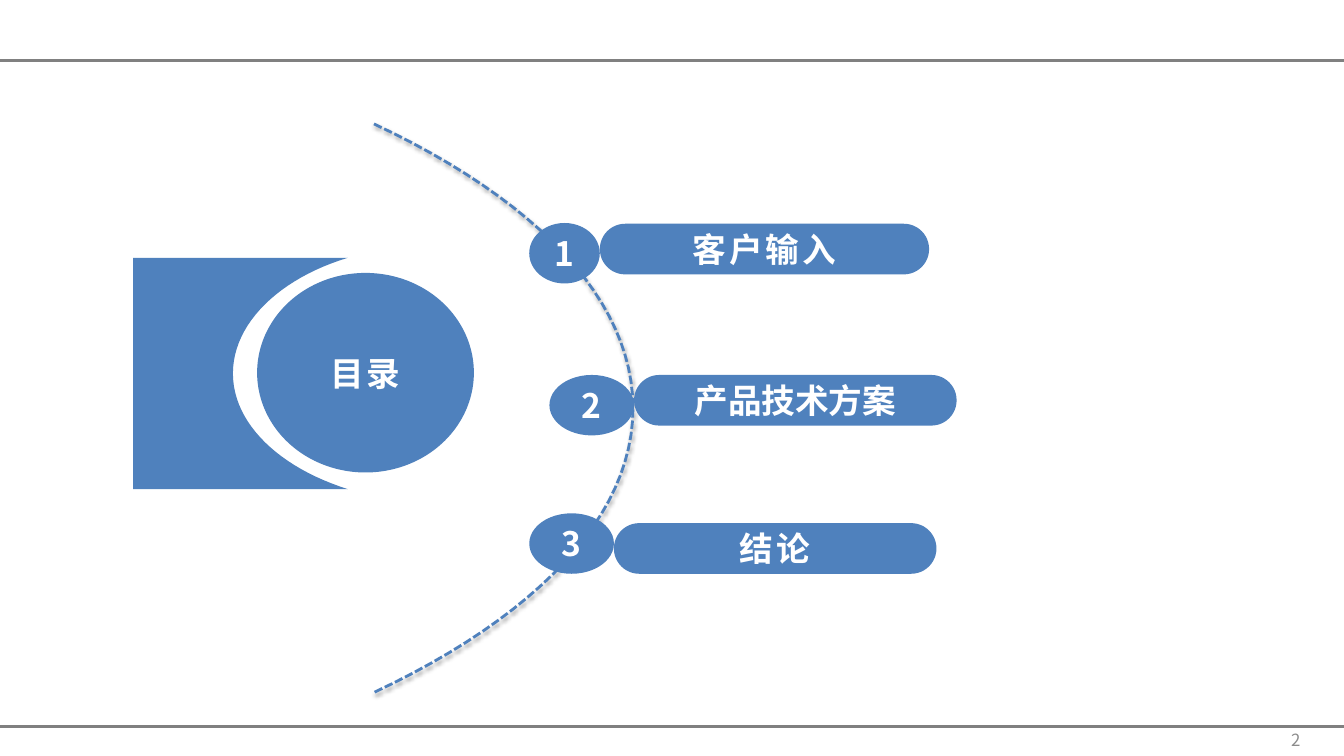
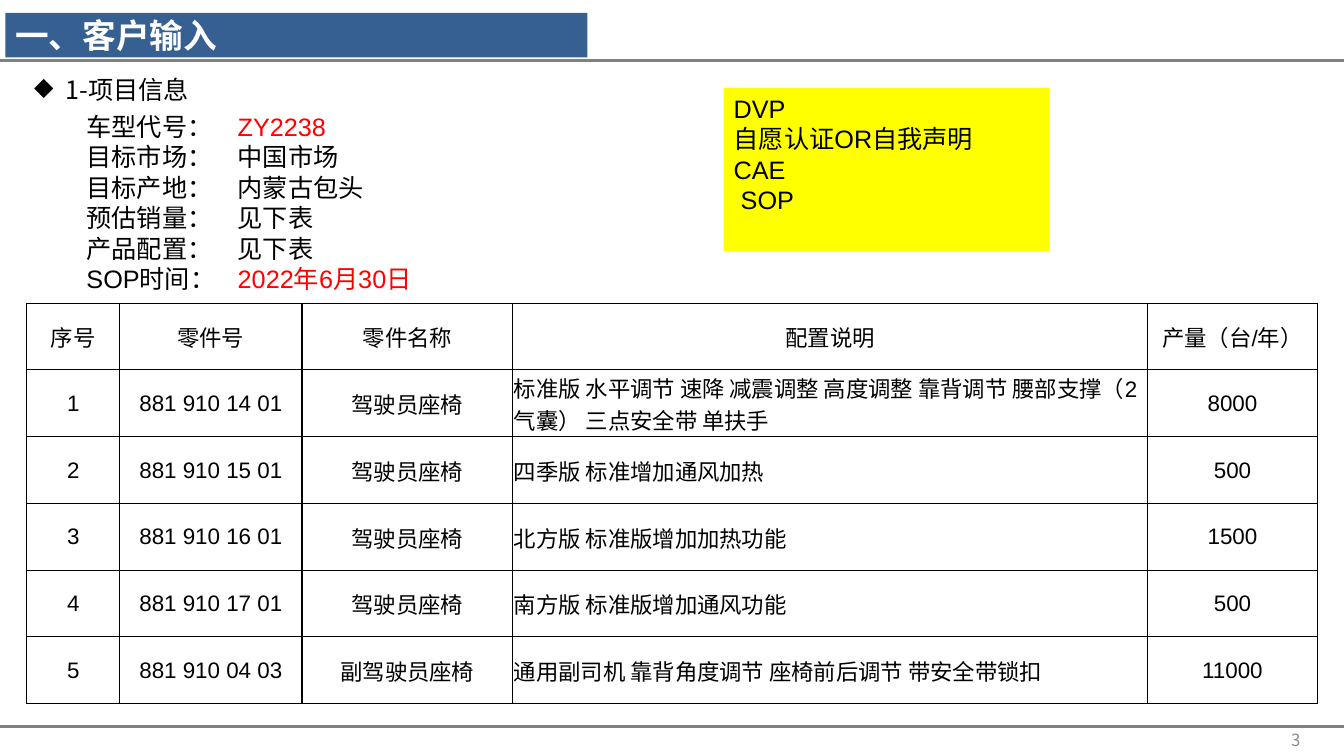
from lxml import etree
from pptx import Presentation
from pptx.dml.color import RGBColor
from pptx.enum.dml import MSO_LINE
from pptx.enum.shapes import MSO_CONNECTOR, MSO_SHAPE as Preset
from pptx.enum.text import MSO_ANCHOR as Anchor, PP_ALIGN as Align
from pptx.oxml.ns import qn
from pptx.util import Emu, Inches, Pt

WIDTH, HEIGHT = Inches(13.33), Inches(7.5)
BLUE = RGBColor(0x4F, 0x81, 0xBD)
DARK_BLUE = RGBColor(0x37, 0x60, 0x92)
YELLOW = RGBColor(0xFF, 0xFF, 0x00)
RED = RGBColor(0xFF, 0x00, 0x00)
WHITE = RGBColor(0xFF, 0xFF, 0xFF)
BLACK = RGBColor(0x00, 0x00, 0x00)
RULE_GREY = RGBColor(0x80, 0x80, 0x80)
NUMBER_GREY = RGBColor(0x8C, 0x8C, 0x8C)
CHINESE_FONT, LATIN_FONT = "Noto Sans CJK SC", "Arial"
BODY_LINE = Pt(21.8)

BADGE_HEIGHT, PILL_HEIGHT = 8, 6.7
AGENDA = [
    ("1", "客户输入", 39.38, 29.5, 5.25, 29.6, 24.5),
    ("2", "产品技术方案", 40.88, 49.6, 6.3, 49.6, 24),
    ("3", "结论", 39.38, 67.9, 6.3, 69.2, 24),
]
PROJECT_FACTS = [
    ("车型代号：", "ZY2238", RED),
    ("目标市场：", "中国市场", BLACK),
    ("目标产地：", "内蒙古包头", BLACK),
    ("预估销量：", "见下表", BLACK),
    ("产品配置：", "见下表", BLACK),
    ("SOP时间：", "2022年6月30日", RED),
]
MILESTONES = ["DVP", "自愿认证OR自我声明", "CAE", "SOP"]
COLUMN_SHARES = [6.9, 13.58, 15.68, 47.25, 12.6]
ROW_SHARE = 8.83
DESCRIPTION_COLUMN = 3
PARTS = [
    ("序号", "零件号", "零件名称", "配置说明", "产量（台/年）"),
    ("1", "881 910 14 01", "驾驶员座椅",
     "标准版 水平调节 速降 减震调整 高度调整 靠背调节 腰部支撑（2气囊） 三点安全带 单扶手", "8000"),
    ("2", "881 910 15 01", "驾驶员座椅", "四季版 标准增加通风加热", "500"),
    ("3", "881 910 16 01", "驾驶员座椅", "北方版 标准版增加加热功能", "1500"),
    ("4", "881 910 17 01", "驾驶员座椅", "南方版 标准版增加通风功能", "500"),
    ("5", "881 910 04 03", "副驾驶员座椅", "通用副司机 靠背角度调节 座椅前后调节 带安全带锁扣", "11000"),
]


def across(share):
    return Emu(round(WIDTH * share / 100))


def down(share):
    return Emu(round(HEIGHT * share / 100))


def place(left, top, width, height):
    return across(left), down(top), across(width), down(height)


def set_font(paragraph, size, color=None, name=CHINESE_FONT, bold=False, spacing=0):
    font = paragraph.font
    font.size, font.name, font.bold = Pt(size), name, bold
    if color is not None:
        font.color.rgb = color
    properties = paragraph._p.pPr.find(qn("a:defRPr"))
    etree.SubElement(properties, qn("a:ea"), typeface=CHINESE_FONT)
    if spacing:
        properties.set("spc", str(round(spacing * 100)))


def add_panel(slide, preset, box, color):
    shape = slide.shapes.add_shape(preset, *place(*box))
    shape.shadow.inherit = False
    shape.fill.solid()
    shape.fill.fore_color.rgb = color
    shape.line.fill.background()
    return shape


def add_label(slide, preset, box, text, color=BLUE, align=Align.CENTER, spacing=0):
    shape = add_panel(slide, preset, box, color)
    frame = shape.text_frame
    frame.word_wrap = False
    frame.vertical_anchor = Anchor.MIDDLE
    frame.margin_top = frame.margin_bottom = 0
    paragraph = frame.paragraphs[0]
    paragraph.text, paragraph.alignment = text, align
    set_font(paragraph, 24, WHITE, bold=True, spacing=spacing)
    return shape


def add_text_frame(slide, box):
    frame = slide.shapes.add_textbox(*place(*box)).text_frame
    frame.word_wrap = True
    return frame


def add_lines(frame, count):
    return [frame.paragraphs[0]] + [frame.add_paragraph() for _ in range(count - 1)]


def add_rule(slide, top):
    line = slide.shapes.add_connector(
        MSO_CONNECTOR.STRAIGHT, 0, down(top), WIDTH, down(top))
    line.line.color.rgb = RULE_GREY
    line.line.width = Pt(2)
    etree.SubElement(line._element.spPr, qn("a:effectLst"))


def add_framed_slide(presentation, number):
    slide = presentation.slides.add_slide(presentation.slide_layouts[6])
    for top in (8, 96.13):
        add_rule(slide, top)
    frame = add_text_frame(slide, (74.2, 95.2, 23.3, 5.3))
    frame.vertical_anchor = Anchor.MIDDLE
    paragraph = frame.paragraphs[0]
    paragraph.text, paragraph.alignment = str(number), Align.RIGHT
    set_font(paragraph, 12, NUMBER_GREY)
    return slide


def curve(start, first, second, end, steps=24):
    points = []
    for step in range(steps + 1):
        t = step / steps
        weights = ((1 - t) ** 3, 3 * t * (1 - t) ** 2, 3 * t * t * (1 - t), t ** 3)
        points.append(tuple(
            sum(weight * value for weight, value in zip(weights, values))
            for values in zip(start, first, second, end)))
    return points


def add_outline(slide, points, close):
    corners = [(across(x), down(y)) for x, y in points]
    builder = slide.shapes.build_freeform(*corners[0], scale=1.0)
    builder.add_line_segments(corners[1:], close=close)
    shape = builder.convert_to_shape()
    shape.shadow.inherit = False
    return shape


def add_notched_block(slide):
    upper = curve((25.88, 34.1), (20.85, 36.8), (17.33, 42.7), (17.33, 49.4))
    lower = curve((17.33, 49.4), (17.33, 56.1), (20.85, 61.9), (25.88, 64.7))
    block = add_outline(slide, [(9.9, 64.7), (9.9, 34.1)] + upper + lower[1:], True)
    block.fill.solid()
    block.fill.fore_color.rgb = BLUE
    block.line.fill.background()


def add_dashed_arc(slide):
    upper = curve((27.83, 16.4), (39.83, 26.4), (47.1, 39.6), (47.1, 54))
    lower = curve((47.1, 54), (47.1, 68.4), (39.83, 81.6), (27.83, 91.6))
    arc = add_outline(slide, upper + lower[1:], False)
    arc.fill.background()
    arc.line.color.rgb = BLUE
    arc.line.width = Pt(2)
    arc.line.dash_style = MSO_LINE.SQUARE_DOT
    effects = arc._element.spPr.find(qn("a:effectLst"))
    shadow = etree.SubElement(
        effects, qn("a:outerShdw"), blurRad=str(Pt(3.1)), dist=str(Pt(1.6)),
        dir="5400000", rotWithShape="0")
    color = etree.SubElement(shadow, qn("a:srgbClr"), val=str(BLACK))
    etree.SubElement(color, qn("a:alpha"), val="38000")


def add_agenda_entry(slide, number, text, left, badge_top, badge_width, pill_top, pill_width):
    spacing = 2.2 if len(text) < 5 else 0
    pill = add_label(
        slide, Preset.ROUNDED_RECTANGLE,
        (left + badge_width, pill_top, pill_width, PILL_HEIGHT), text, spacing=spacing)
    pill.adjustments[0] = 0.5
    add_label(slide, Preset.OVAL, (left, badge_top, badge_width, BADGE_HEIGHT), number)


def add_bullet_heading(slide, text):
    paragraph = add_text_frame(slide, (1.8, 9.2, 20, 5.3)).paragraphs[0]
    paragraph.text = text
    properties = paragraph._p.get_or_add_pPr()
    properties.set("marL", str(Inches(0.31)))
    properties.set("indent", str(-Inches(0.31)))
    etree.SubElement(properties, qn("a:buChar"), char="◆")
    set_font(paragraph, 18, BLACK)


def add_project_facts(slide):
    frame = add_text_frame(slide, (5.7, 14, 45, 25.6))
    paragraphs = add_lines(frame, len(PROJECT_FACTS))
    for paragraph, (label, value, color) in zip(paragraphs, PROJECT_FACTS):
        paragraph.line_spacing = BODY_LINE
        stops = etree.SubElement(paragraph._p.get_or_add_pPr(), qn("a:tabLst"))
        etree.SubElement(stops, qn("a:tab"), pos=str(Inches(1.5)), algn="l")
        for text, text_color in ((label + "\t", BLACK), (value, color)):
            run = paragraph.add_run()
            run.text = text
            run.font.color.rgb = text_color
        set_font(paragraph, 18, name=LATIN_FONT)


def add_milestone_note(slide):
    note = add_panel(slide, Preset.RECTANGLE, (53.85, 11.6, 24.23, 21.6), YELLOW)
    frame = note.text_frame
    frame.vertical_anchor = Anchor.TOP
    paragraphs = add_lines(frame, len(MILESTONES))
    for paragraph, text in zip(paragraphs, MILESTONES):
        paragraph.text, paragraph.alignment = text, Align.LEFT
        paragraph.line_spacing = BODY_LINE
        set_font(paragraph, 18, BLACK, LATIN_FONT)
    paragraphs[-1]._p.pPr.set("marL", str(Inches(0.07)))


def set_borders(cell):
    properties = cell._tc.get_or_add_tcPr()
    for position, side in enumerate(("lnL", "lnR", "lnT", "lnB")):
        line = etree.Element(qn("a:" + side), w=str(Pt(1)))
        fill = etree.SubElement(line, qn("a:solidFill"))
        etree.SubElement(fill, qn("a:srgbClr"), val=str(BLACK))
        properties.insert(position, line)


def add_parts_table(slide):
    box = place(2, 40.1, sum(COLUMN_SHARES), ROW_SHARE * len(PARTS))
    table = slide.shapes.add_table(len(PARTS), len(COLUMN_SHARES), *box).table
    table.first_row = table.horz_banding = False
    for column, share in zip(table.columns, COLUMN_SHARES):
        column.width = across(share)
    for row_index, values in enumerate(PARTS):
        table.rows[row_index].height = down(ROW_SHARE)
        for column_index, value in enumerate(values):
            cell = table.cell(row_index, column_index)
            cell.fill.background()
            set_borders(cell)
            cell.vertical_anchor = Anchor.MIDDLE
            cell.margin_left = cell.margin_right = cell.margin_top = Inches(0.01)
            cell.margin_bottom = 0
            paragraph = cell.text_frame.paragraphs[0]
            paragraph.text = value
            is_description = row_index > 0 and column_index == DESCRIPTION_COLUMN
            paragraph.alignment = Align.LEFT if is_description else Align.CENTER
            set_font(paragraph, 16, BLACK, LATIN_FONT)


def build_agenda(presentation):
    slide = add_framed_slide(presentation, 2)
    add_notched_block(slide)
    add_dashed_arc(slide)
    add_label(slide, Preset.OVAL, (19.13, 36.1, 16.13, 26.4), "目录", spacing=2.2)
    for entry in AGENDA:
        add_agenda_entry(slide, *entry)


def build_customer_input(presentation):
    slide = add_framed_slide(presentation, 3)
    add_label(slide, Preset.RECTANGLE, (0.4, 1.7, 43.3, 5.9),
              "一、客户输入", DARK_BLUE, Align.LEFT)
    add_bullet_heading(slide, "1-项目信息")
    add_project_facts(slide)
    add_parts_table(slide)
    add_milestone_note(slide)


def main():
    presentation = Presentation()
    presentation.slide_width, presentation.slide_height = WIDTH, HEIGHT
    build_agenda(presentation)
    build_customer_input(presentation)
    presentation.save("out.pptx")


if __name__ == "__main__":
    main()
